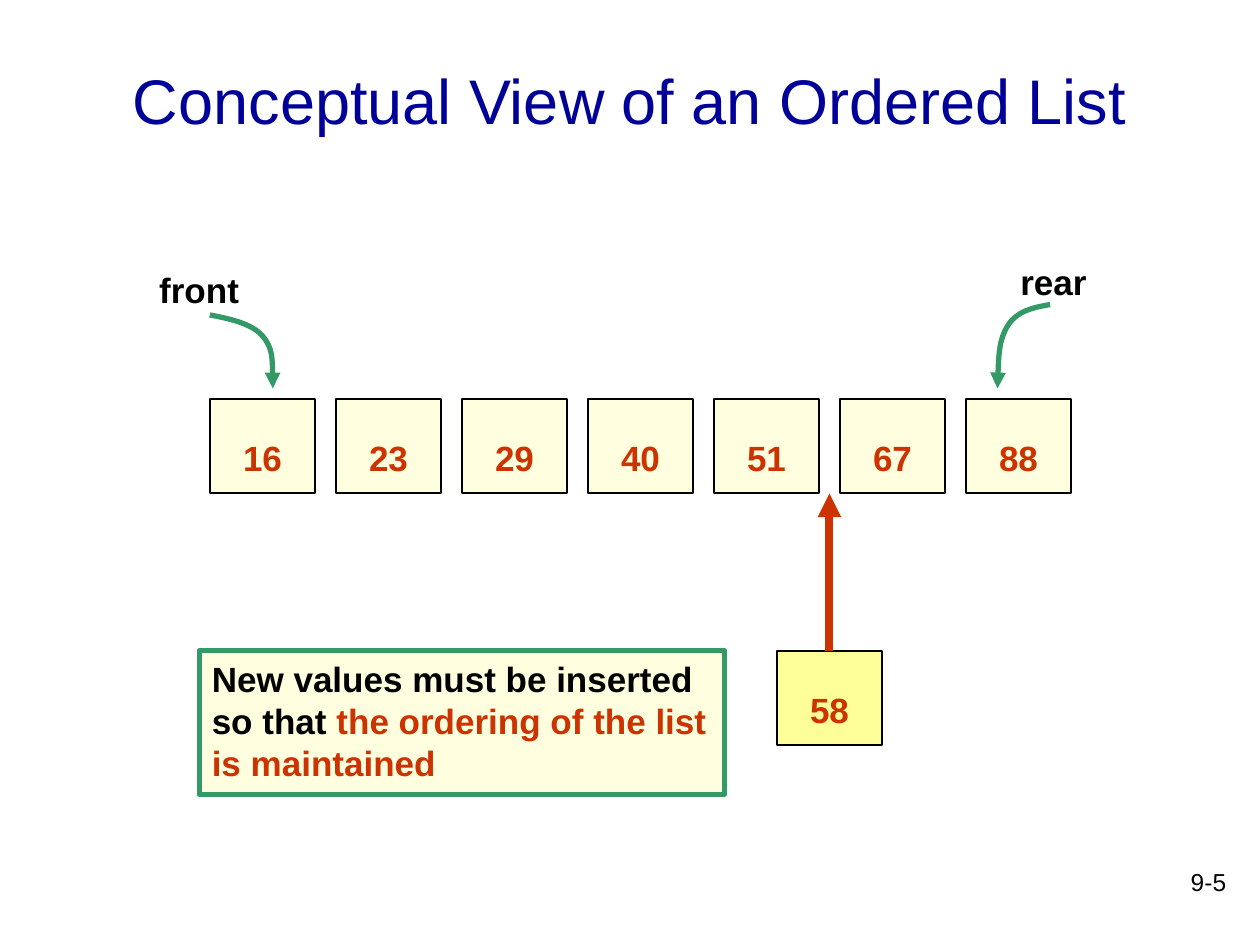
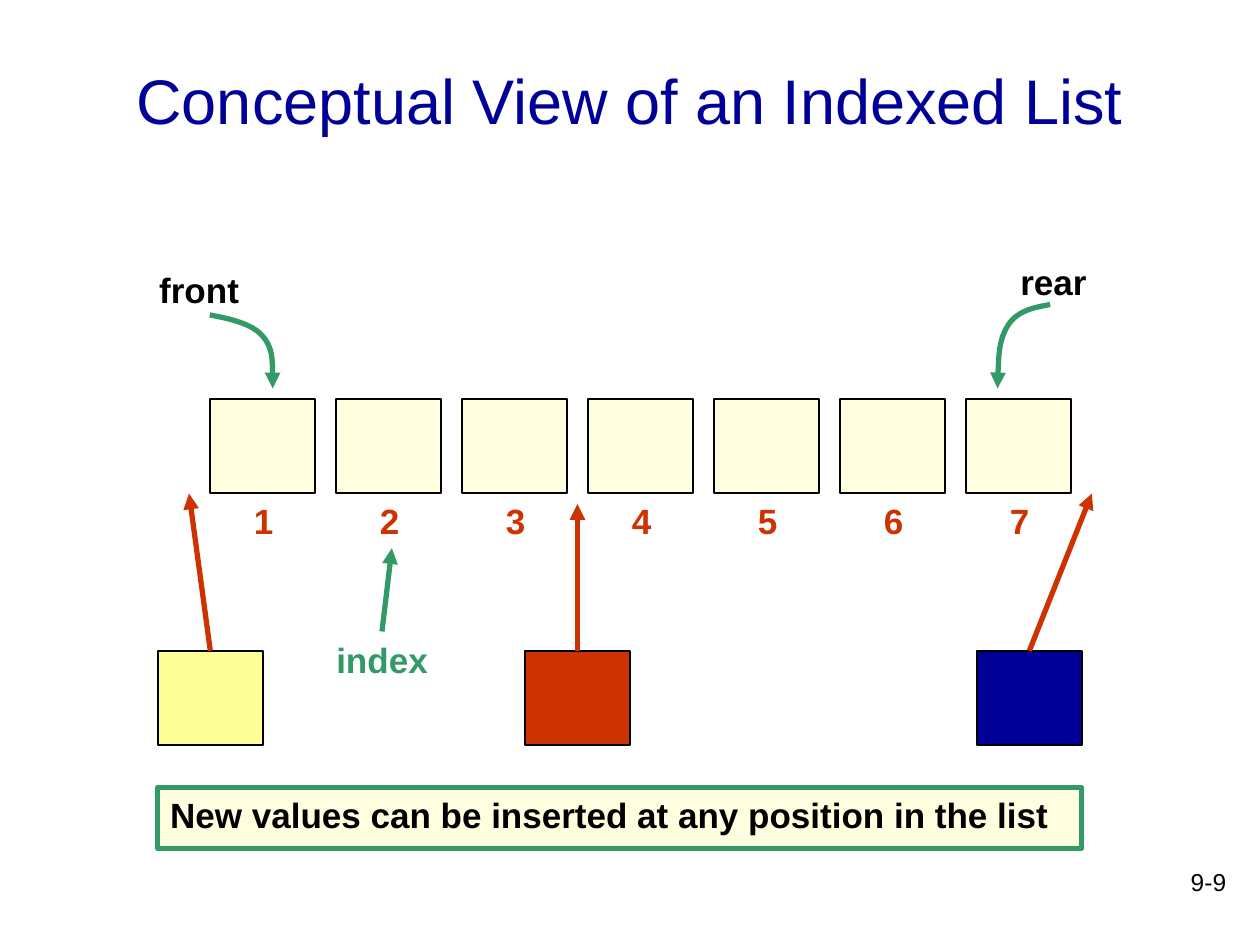
from lxml.etree import SubElement
from pptx import Presentation
from pptx.dml.color import RGBColor
from pptx.enum.shapes import MSO_CONNECTOR, MSO_SHAPE
from pptx.enum.text import MSO_ANCHOR, PP_ALIGN
from pptx.oxml.ns import qn
from pptx.util import Cm, Pt

BLACK = RGBColor(0x00, 0x00, 0x00)
NAVY = RGBColor(0x00, 0x00, 0x99)
RED = RGBColor(0xCC, 0x33, 0x00)
GREEN = RGBColor(0x33, 0x99, 0x66)
CREAM = RGBColor(0xFF, 0xFF, 0xDF)
YELLOW = RGBColor(0xFF, 0xFF, 0x99)

CELL_W, CELL_H = 2.12, 1.9
ROW_LEFT, ROW_TOP, PITCH = 4.23, 8.04, 2.54
NEW_TOP = 13.12

SLIDES = [
    {
        "title": "Conceptual View of an Ordered List",
        "number": "9-5",
        "labels": ["16", "23", "29", "40", "51", "67", "88"],
        "label_offset": (0.42, 0.64),
        "arrow_width": 4.5,
        "inserts": [(15.66, YELLOW, "58", (16.72, 9.95))],
        "message": [("New values must be inserted so that ", BLACK),
                    ("the ordering of the list is maintained", RED)],
        "message_box": (4.02, 13.12, 10.58, 2.9),
    },
    {
        "title": "Conceptual View of an Indexed List",
        "number": "9-9",
        "labels": ["1", "2", "3", "4", "5", "6", "7"],
        "label_offset": (0.64, 1.9),
        "arrow_width": 3,
        "inserts": [(3.18, YELLOW, "", (3.81, 9.95)),
                    (10.58, RED, "", (11.64, 10.16)),
                    (19.69, NAVY, "", (22.01, 9.95))],
        "message": [("New values can be inserted at any position in the list", BLACK)],
        "message_box": (3.18, 15.88, 18.63, 1.22),
    },
]

POINTERS = [
    ("front", (2.96, 5.29),
     [(4.23, 6.35), (4.66, 6.43), (5.08, 6.53), (5.29, 6.77),
      (5.5, 7.01), (5.5, 7.42), (5.5, 7.83)]),
    ("rear", (20.32, 5.12),
     [(21.17, 6.14), (20.83, 6.2), (20.5, 6.27), (20.32, 6.56),
      (20.14, 6.84), (20.12, 7.34), (20.11, 7.83)]),
]


def add_text(slide, text, left, top, width, height, size=20, bold=True,
             color=BLACK, align=PP_ALIGN.LEFT, anchor=MSO_ANCHOR.TOP,
             wrap=True, sp=None):
    sp = sp or slide.shapes.add_textbox(Cm(left), Cm(top), Cm(width), Cm(height))
    tf = sp.text_frame
    tf.word_wrap = wrap
    tf.vertical_anchor = anchor
    p = tf.paragraphs[0]
    p.alignment = align
    for part, part_color in [(text, color)] if isinstance(text, str) else text:
        r = p.add_run()
        r.text = part
        r.font.name = "Arial"
        r.font.size = Pt(size)
        r.font.bold = bold
        r.font.color.rgb = part_color


def style(sp, line, width, fill=None, arrow=False):
    sp.line.color.rgb = line
    sp.line.width = Pt(width)
    if fill is not None:
        sp.fill.solid()
        sp.fill.fore_color.rgb = fill
    spPr = sp._element.spPr
    if arrow:
        SubElement(spPr.find(qn("a:ln")), qn("a:tailEnd"), type="triangle")
    SubElement(spPr, qn("a:effectLst"))


prs = Presentation()
prs.slide_width, prs.slide_height = Cm(25.4), Cm(19.05)

for content in SLIDES:
    slide = prs.slides.add_slide(prs.slide_layouts[6])
    shapes = slide.shapes
    add_text(slide, content["number"], 19.69, 17.35, 5.28, 1.27,
             size=14, bold=False, align=PP_ALIGN.RIGHT)
    add_text(slide, content["title"], 1.9, 0.42, 21.59, 3.18, size=36, bold=False,
             color=NAVY, align=PP_ALIGN.CENTER, anchor=MSO_ANCHOR.MIDDLE)

    dx, dy = content["label_offset"]
    for i, label in enumerate(content["labels"]):
        left = ROW_LEFT + i * PITCH
        cell = shapes.add_shape(MSO_SHAPE.RECTANGLE, Cm(left), Cm(ROW_TOP),
                                Cm(CELL_W), Cm(CELL_H))
        style(cell, BLACK, 1, fill=CREAM)
        add_text(slide, label, left + dx, ROW_TOP + dy, 1.69, 1.1, color=RED)

    for name, (left, top), points in POINTERS:
        add_text(slide, name, left, top, 2.75, 1.1)
        start, *rest = [(Cm(x), Cm(y)) for x, y in points]
        builder = shapes.build_freeform(*start)
        builder.add_line_segments(rest, close=False)
        curve = builder.convert_to_shape()
        curve.fill.background()
        style(curve, GREEN, 3, arrow=True)
        segments = curve._element.xpath(".//a:lnTo")
        outline = segments[0].getparent()
        for i in range(0, len(segments), 3):
            bezier = SubElement(outline, qn("a:cubicBezTo"))
            for segment in segments[i:i + 3]:
                bezier.append(segment[0])
                outline.remove(segment)

    for left, fill, value, (tip_x, tip_y) in content["inserts"]:
        box = shapes.add_shape(MSO_SHAPE.RECTANGLE, Cm(left), Cm(NEW_TOP),
                               Cm(CELL_W), Cm(CELL_H))
        style(box, BLACK, 1, fill=fill)
        if value:
            add_text(slide, value, left + dx, NEW_TOP + dy, 1.69, 1.1, color=RED)
        arrow = shapes.add_connector(MSO_CONNECTOR.STRAIGHT, Cm(left + CELL_W / 2),
                                     Cm(NEW_TOP), Cm(tip_x), Cm(tip_y))
        arrow.begin_connect(box, 0)
        style(arrow, RED, content["arrow_width"], arrow=True)

    frame = content["message_box"]
    message = shapes.add_shape(MSO_SHAPE.RECTANGLE, *map(Cm, frame))
    style(message, GREEN, 3, fill=CREAM)
    add_text(slide, content["message"], *frame, sp=message)

index_arrow = shapes.add_connector(MSO_CONNECTOR.STRAIGHT, Cm(7.7), Cm(12.73),
                                   Cm(7.9), Cm(11.05))
style(index_arrow, GREEN, 3, arrow=True)
add_text(slide, "index", 6.53, 12.75, 2.36, 1.12, color=GREEN, wrap=False)

prs.save("out.pptx")
